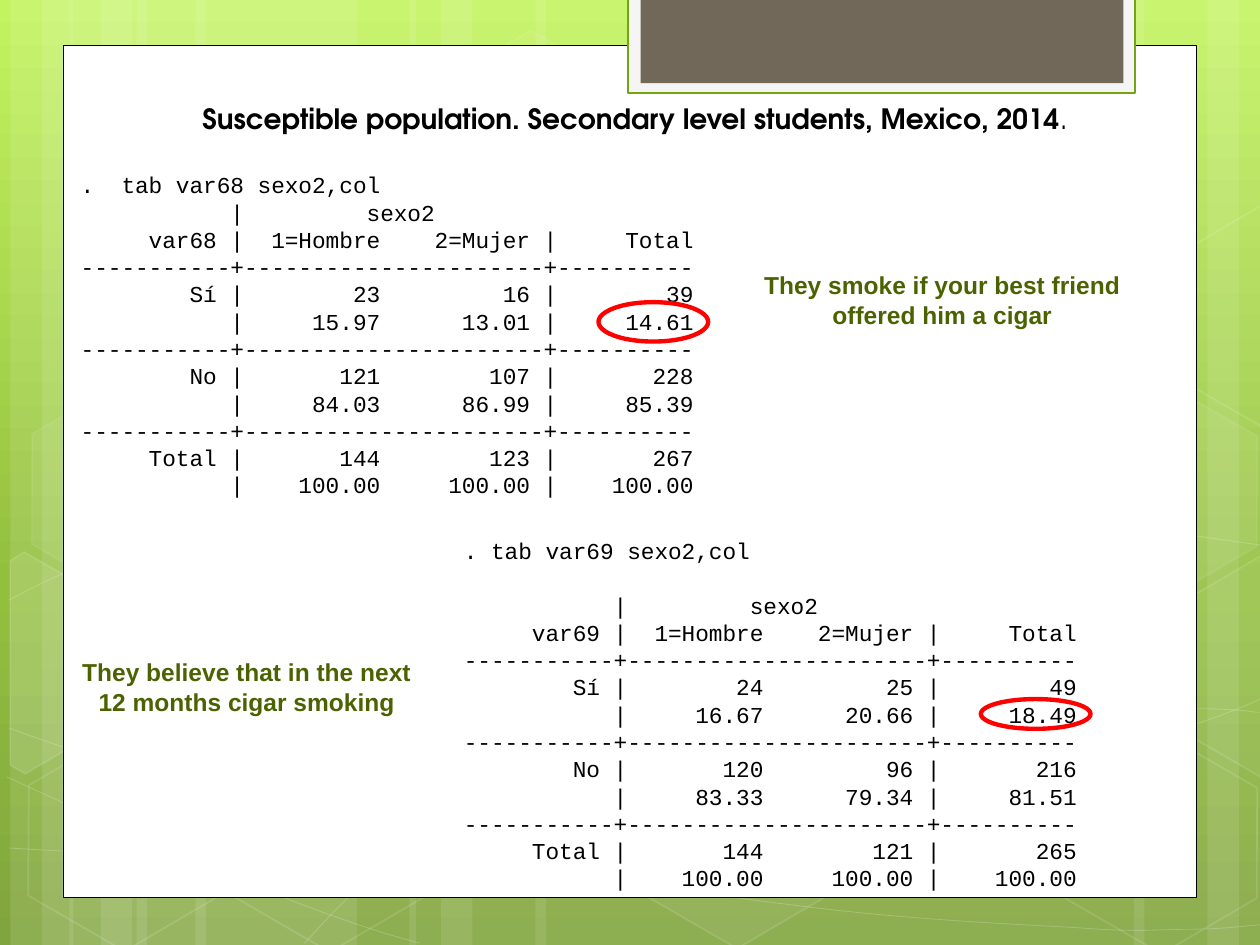
from copy import deepcopy
from dataclasses import dataclass
from math import cos, radians, sin
from typing import NamedTuple, Optional

from lxml import etree
from pptx import Presentation
from pptx.dml.color import RGBColor
from pptx.enum import shapes, text
from pptx.oxml.ns import qn
from pptx.util import Pt


@dataclass(frozen=True)
class Theme:
    white: str = "FFFFFF"
    black: str = "000000"
    olive: str = "4A6300"
    red: str = "FF0000"
    frame: str = "F5F5F5"
    green: str = "74A510"
    brown: str = "71685A"
    sky: tuple = ((0, "C3F35F"), (0.62, "93BF3F"), (1, "81A53E"))
    title_font: str = "TeX Gyre Adventor"
    note_font: str = "Arial"
    mono_font: str = "Courier New"
    title_size: float = 16
    note_size: float = 14
    mono_size: float = 13
    note_leading: float = 17.1
    mono_leading: float = 15.6


class Box(NamedTuple):
    x: float
    y: float
    w: float
    h: float


class Paint(NamedTuple):
    fill: Optional[str] = None
    fill_alpha: float = 100
    line: Optional[str] = None
    weight: float = 1
    line_alpha: float = 100


class Hexagon(NamedTuple):
    x: float
    y: float
    fill_alpha: float
    line_alpha: float


class CutHexagon(NamedTuple):
    center: tuple
    points: list
    fill_alpha: float


@dataclass
class CrossTab:
    command: str
    variable: str
    groups: list
    box: Box
    ring: Box
    header_gap: float = 0

    def lines(self) -> list:
        def row(label, cells):
            a, b, total = cells
            return f"{label:>10} |{a:>10} {b:>10} |{total:>10}"

        out = [self.command, f"{'':>10} |{'sexo2':>14}",
               row(self.variable, ("1=Hombre", "2=Mujer", "Total"))]
        for label, counts, shares in self.groups:
            out.append("+".join("-" * n for n in (11, 22, 10)))
            out += [row(label, counts), row("", [f"{v:.2f}" for v in shares])]
        return out


T = Theme()
FULL = (100, 100, 100)
BANDS = [(78, 126), (6, 36), (24, 60), (111.6, 126), (39.6, 36), (57.6, 60),
         (528, 126), (690, 36), (648, 60), (306, 222), (234, 36), (252, 60)]
CURVES = [
    [(5, 484.6), (44, 487), (83, 489), (137, 488), (191, 487), (258, 486), (330, 479),
     (402, 472), (504, 458), (570, 444), (636, 431), (703, 409), (725, 397)],
    [(5, 343), (26, 332), (47, 321), (87, 310), (128, 300), (186, 284), (250, 279),
     (314, 274), (392, 273), (471, 279), (550, 284), (682, 307), (725, 312)],
    [(4, 444), (91, 484), (178, 523), (240, 539)],
    [(5, 416), (27, 424), (50, 432), (92, 444), (134, 454), (197, 472), (257, 485),
     (317, 497), (392, 510), (452, 517), (512, 525), (576, 528), (614, 530),
     (652, 533), (662, 531), (680, 531), (699, 531), (712, 529), (725, 528)],
    [(174, 539), (187, 525), (200, 510), (217, 498), (235, 485), (259, 470), (279, 460),
     (300, 450), (312, 445), (338, 438), (364, 431), (413, 421), (438, 416),
     (464, 411), (467, 411), (490, 410), (512, 408), (547, 405), (572, 405),
     (597, 404), (638, 405), (638, 405), (654, 405), (670, 405), (686, 405),
     (699, 405), (711, 406), (718, 407), (724, 407), (722, 407), (724, 407.5)],
]
HEXAGONS = [Hexagon(240.5, 26, 4, 8), Hexagon(358, 424, 6, 12), Hexagon(8, 425.5, 0, 12),
            Hexagon(10, 224.6, 7, 8), Hexagon(125.3, 426, 0, 12), Hexagon(542, 326, 10, 12),
            Hexagon(600.5, 427, 0, 12), Hexagon(600.5, 226, 7, 8)]
RIGHT_CUT = [(666.7, 349.2), (720.7, 317.5), (726.5, 321.1), (726.5, 441.4),
             (721.4, 444.2), (666.7, 412.6)]
CUT_HEXAGONS = [
    CutHexagon((25.9, 385.2), [(5.8, 320.4), (13.7, 315.4), (69.1, 347), (68.4, 410.4),
                               (14.4, 442.1), (5.8, 437)], 10),
    CutHexagon((709.2, 374.4), RIGHT_CUT, 4),
    CutHexagon((709.2, 173.5), [(x, y - 200.2) for x, y in RIGHT_CUT], 0),
]
PANELS = [(Box(36, 26, 648, 487), Paint(T.white, line=T.black, weight=0.5)),
          (Box(359, -1.5, 289.5, 54.7), Paint(T.frame, line=T.green, weight=1.25)),
          (Box(366, -1.5, 276, 49), Paint(T.brown))]
TABS = [
    CrossTab(".  tab var68 sexo2,col", "var68",
             [("Sí", (23, 16, 39), (15.97, 13.01, 14.61)),
              ("No", (121, 107, 228), (84.03, 86.99, 85.39)),
              ("Total", (144, 123, 267), FULL)],
             Box(39, 94.2, 436, 196.7), Box(342, 172.7, 62.7, 22.5)),
    CrossTab(". tab var69 sexo2,col", "var69",
             [("Sí", (24, 25, 49), (16.67, 20.66, 18.49)),
              ("No", (120, 96, 216), (83.33, 79.34, 81.51)),
              ("Total", (144, 121, 265), FULL)],
             Box(258, 303.2, 401, 227.5), Box(560.5, 399.5, 62.7, 17), T.mono_leading),
]
NOTES = [(["They smoke if your best friend", "offered him a cigar"], Box(427.5, 150.4, 222, 41)),
         (["They believe that in the next 12 months cigar smoking"], Box(37, 371.5, 208, 41))]


def set_alpha(parent, alpha: float) -> None:
    if alpha < 100:
        color = parent.find(qn("a:solidFill"))[0]
        etree.SubElement(color, qn("a:alpha")).set("val", str(int(alpha * 1000)))


def paint(sp, look: Paint) -> None:
    sp.shadow.inherit = False
    if look.fill and look.fill_alpha:
        sp.fill.solid()
        sp.fill.fore_color.rgb = RGBColor.from_string(look.fill)
        set_alpha(sp._element.spPr, look.fill_alpha)
    else:
        sp.fill.background()
    if look.line:
        sp.line.color.rgb = RGBColor.from_string(look.line)
        sp.line.width = Pt(look.weight)
        set_alpha(sp._element.spPr.find(qn("a:ln")), look.line_alpha)
    else:
        sp.line.fill.background()


def add_preset(canvas, kind, box: Box, look: Paint):
    sp = canvas.add_shape(kind, *map(Pt, box))
    paint(sp, look)
    return sp


def add_outline(canvas, points: list, look: Paint, close: bool = True):
    pts = [(Pt(x), Pt(y)) for x, y in points]
    builder = canvas.build_freeform(*pts[0], scale=1.0)
    builder.add_line_segments(pts[1:], close=close)
    sp = builder.convert_to_shape()
    paint(sp, look)
    return sp


def add_curve(canvas, controls: list, look: Paint) -> None:
    sp = add_outline(canvas, controls, look, False)
    segments = list(sp._element.iter(qn("a:lnTo")))
    for i in range(0, len(segments), 3):
        first, *rest = segments[i:i + 3]
        first.tag = qn("a:cubicBezTo")
        for segment in rest:
            first.append(segment[0])
            segment.getparent().remove(segment)


def add_cut_hexagon(canvas, cut: CutHexagon) -> None:
    cx, cy = cut.center
    c, n = cos(radians(30)), sin(radians(30))
    points = [(cx + (x - cx) * c + (y - cy) * n, cy - (x - cx) * n + (y - cy) * c)
              for x, y in cut.points]
    sp = add_outline(canvas, points, Paint(T.white, cut.fill_alpha, T.white, 1, 12))
    sp.rotation = 30


def style(p, font: str, size: float, color: str, bold: bool = False) -> None:
    for r in p.runs:
        r.font.name, r.font.size, r.font.bold = font, Pt(size), bold
        r.font.color.rgb = RGBColor.from_string(color)


def add_lines(s, lines: list, box: Box, leading: float, align, *look) -> list:
    tf = s.shapes.add_textbox(*map(Pt, box)).text_frame
    tf.word_wrap = True
    tf.text = "\n".join(lines)
    for p in tf.paragraphs:
        p.alignment, p.line_spacing = align, Pt(leading)
        style(p, *look)
    return tf.paragraphs


def draw_backdrop(s) -> None:
    fill = s.background.fill
    fill.gradient()
    fill.gradient_angle = 270
    first = fill.gradient_stops[0]._gs
    first.addnext(deepcopy(first))
    for stop, (position, color) in zip(fill.gradient_stops, T.sky):
        stop.position = position
        stop.color.rgb = RGBColor.from_string(color)
    group = s.shapes.add_group_shape()
    canvas = group.shapes
    for x, w in BANDS:
        add_preset(canvas, shapes.MSO_SHAPE.RECTANGLE, Box(x, 0, w, 540), Paint(T.white, 10))
    for curve in CURVES:
        add_curve(canvas, curve, Paint(line=T.white, weight=0.5, line_alpha=20))
    for h in HEXAGONS:
        sp = add_preset(canvas, shapes.MSO_SHAPE.HEXAGON, Box(h.x, h.y, 126, 109.5),
                        Paint(T.white, h.fill_alpha, T.white, 1, h.line_alpha))
        sp.adjustments[0], sp.adjustments[1] = 0.285, 1.155
        sp.rotation = 30
    for cut in CUT_HEXAGONS:
        add_cut_hexagon(canvas, cut)
    panels = [add_preset(s.shapes, shapes.MSO_SHAPE.RECTANGLE, *panel) for panel in PANELS]
    tree = s.slide_layout.shapes._spTree
    for position, sp in enumerate([group, *panels], 2):
        tree.insert(position, sp._element)


def draw_title(s) -> None:
    sp = s.shapes.title
    sp.left, sp.top, sp.width, sp.height = map(Pt, (54, 54.5, 617.8, 46))
    tf = sp.text_frame
    tf.text = "Susceptible population. Secondary level students, Mexico, 2014"
    tf.word_wrap, tf.vertical_anchor = True, text.MSO_ANCHOR.TOP
    p = tf.paragraphs[0]
    p.alignment = text.PP_ALIGN.CENTER
    p.add_run().text = "."
    style(p, T.title_font, T.title_size, T.black, True)
    p.runs[-1].font.bold = False


def draw_tab(s, tab: CrossTab) -> None:
    paragraphs = add_lines(s, tab.lines(), tab.box, T.mono_leading, text.PP_ALIGN.LEFT,
                           T.mono_font, T.mono_size, T.black)
    paragraphs[1].space_before = Pt(tab.header_gap)
    add_preset(s.shapes, shapes.MSO_SHAPE.OVAL, tab.ring, Paint(line=T.red, weight=2.5))


def main() -> None:
    prs = Presentation()
    prs.slide_width, prs.slide_height = Pt(720), Pt(540)
    s = prs.slides.add_slide(prs.slide_layouts[5])
    draw_backdrop(s)
    draw_title(s)
    for lines, box in NOTES:
        add_lines(s, lines, box, T.note_leading, text.PP_ALIGN.CENTER,
                  T.note_font, T.note_size, T.olive, True)
    for tab in TABS:
        draw_tab(s, tab)
    prs.save("out.pptx")


if __name__ == "__main__":
    main()
